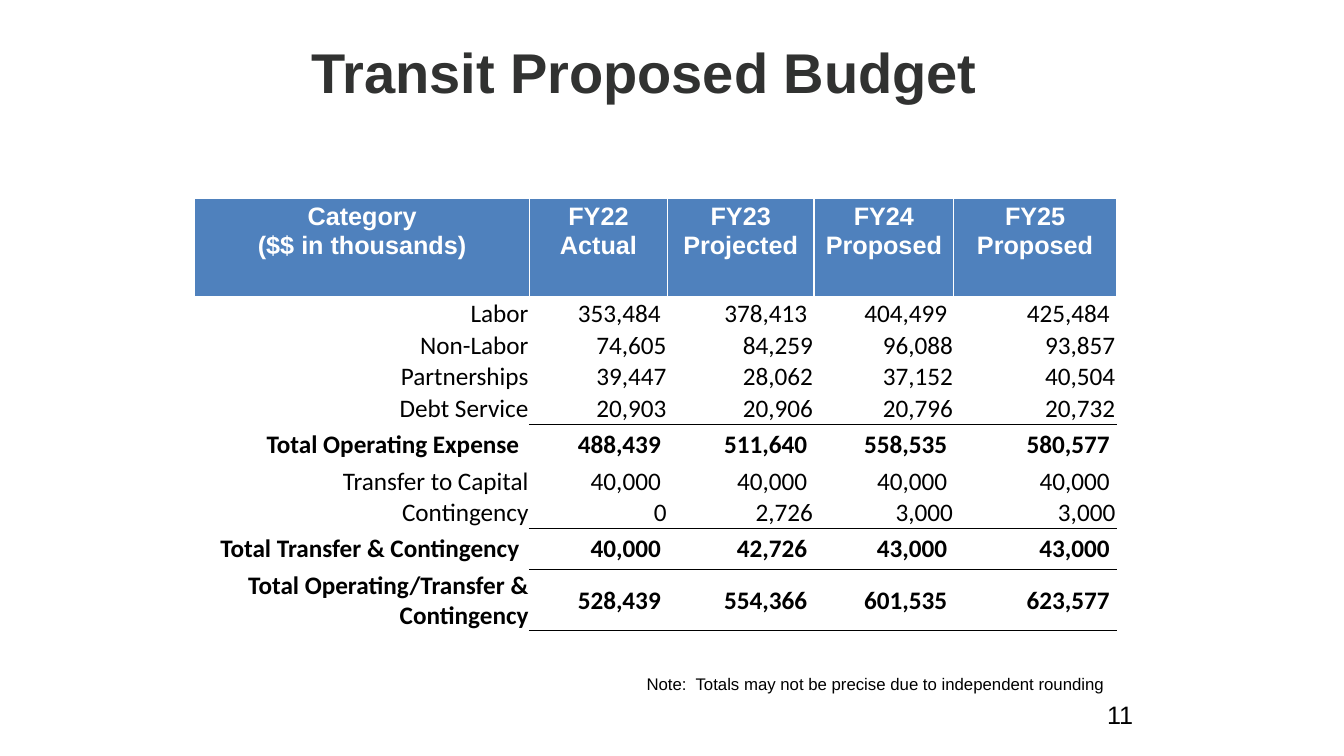
from lxml import etree
from pptx import Presentation
from pptx.dml.color import RGBColor
from pptx.enum import text
from pptx.oxml.ns import qn
from pptx.util import Pt

ALIGN = text.PP_ALIGN
MID = text.MSO_ANCHOR.MIDDLE


def style(par, size, face, color, bold, align):
    par.alignment = align
    font = par.font
    font.size, font.name, font.bold = Pt(size), face, bold
    font.color.rgb = RGBColor.from_string(color)


def edge(cell, side, color, width):
    """Draw one cell border; call in the order L, R, T, B, before the fill."""
    line = etree.SubElement(cell._tc.get_or_add_tcPr(), qn("a:ln" + side), w=str(Pt(width)))
    fill = etree.SubElement(line, qn("a:solidFill"))
    etree.SubElement(fill, qn("a:srgbClr"), val=color)


deck = Presentation()
deck.slide_width, deck.slide_height = Pt(960), Pt(540)
slide = deck.slides.add_slide(deck.slide_layouts[6])

# Title, page number and note
labels = [
    ("Transit Proposed Budget", 154, 11.5, 612, 84, 40, "313231", True, ALIGN.CENTER),
    ("11", 676.8, 499.7, 139.7, 28.8, 18, "000000", False, ALIGN.RIGHT),
    ("Note:  Totals may not be precise due to independent rounding",
     390.2, 478, 406, 21.6, 12, "000000", False, ALIGN.RIGHT),
]
for words, x, y, w, h, size, color, bold, align in labels:
    frame = slide.shapes.add_textbox(Pt(x), Pt(y), Pt(w), Pt(h)).text_frame
    frame.word_wrap = True
    par = frame.paragraphs[0]
    par.text = words
    style(par, size, "Arial", color, bold, align)
    if size == 40:
        frame.vertical_anchor = MID
        par.line_spacing = 0.9
    elif size == 18:
        frame.margin_top = 0

# Budget table: row height, bold, line below, cells
heads = ["Category\n($$ in thousands)", "FY22 Actual", "FY23 Projected",
         "FY24 Proposed", "FY25 Proposed"]
rows = [
    (71.3, True, False, heads),
    (22.6, False, False, ["Labor", "353,484 ", "378,413 ", "404,499 ", "425,484 "]),
    (22.6, False, False, ["Non-Labor", "74,605", "84,259", "96,088", "93,857"]),
    (22.6, False, False, ["Partnerships", "39,447", "28,062", "37,152", "40,504"]),
    (22.6, False, True, ["Debt Service", "20,903", "20,906", "20,796", "20,732"]),
    (29.2, True, False, ["Total Operating Expense", "488,439 ", "511,640 ", "558,535 ", "580,577 "]),
    (22.6, False, False, ["Transfer to Capital", "40,000 ", "40,000 ", "40,000 ", "40,000 "]),
    (22.6, False, True, ["Contingency", "0", "2,726", "3,000", "3,000"]),
    (29.2, True, True, ["Total Transfer & Contingency", "40,000 ", "42,726 ", "43,000 ", "43,000 "]),
    (44, True, True, ["Total Operating/Transfer & Contingency",
                      "528,439 ", "554,366 ", "601,535 ", "623,577 "]),
]
widths = [239, 98.6, 104.6, 100, 116]
table = slide.shapes.add_table(len(rows), len(widths), Pt(139.2), Pt(141.4),
                               Pt(sum(widths)), Pt(sum(row[0] for row in rows))).table
table.first_row = table.horz_banding = False
for col, width in zip(table.columns, widths):
    col.width = Pt(width)

above = False
for r, (height, bold, below, cells) in enumerate(rows):
    table.rows[r].height = Pt(height)
    head = r == 0
    for c, words in enumerate(cells):
        cell = table.cell(r, c)
        cell.text = words
        for par in cell.text_frame.paragraphs:
            style(par, 18, "Arial" if head else "Calibri", "FFFFFF" if head else "000000",
                  bold, ALIGN.CENTER if head else ALIGN.RIGHT)
        roomy = head or (c == 0 and height == 29.2)
        if not roomy:
            cell.vertical_anchor = MID
            cell.margin_left = cell.margin_right = cell.margin_top = Pt(0.7)
            cell.margin_bottom = 0
        edge(cell, "L", "FFFFFF", 1)
        edge(cell, "R", "FFFFFF", 1)
        edge(cell, "T", "000000" if above and c else "FFFFFF", 3 if r == 1 else 1)
        edge(cell, "B", "000000" if below and c else "FFFFFF", 3 if head else 1)
        if head:
            cell.fill.solid()
            cell.fill.fore_color.rgb = RGBColor.from_string("4F81BD")
        else:
            cell.fill.background()
    above = below

deck.save("out.pptx")
